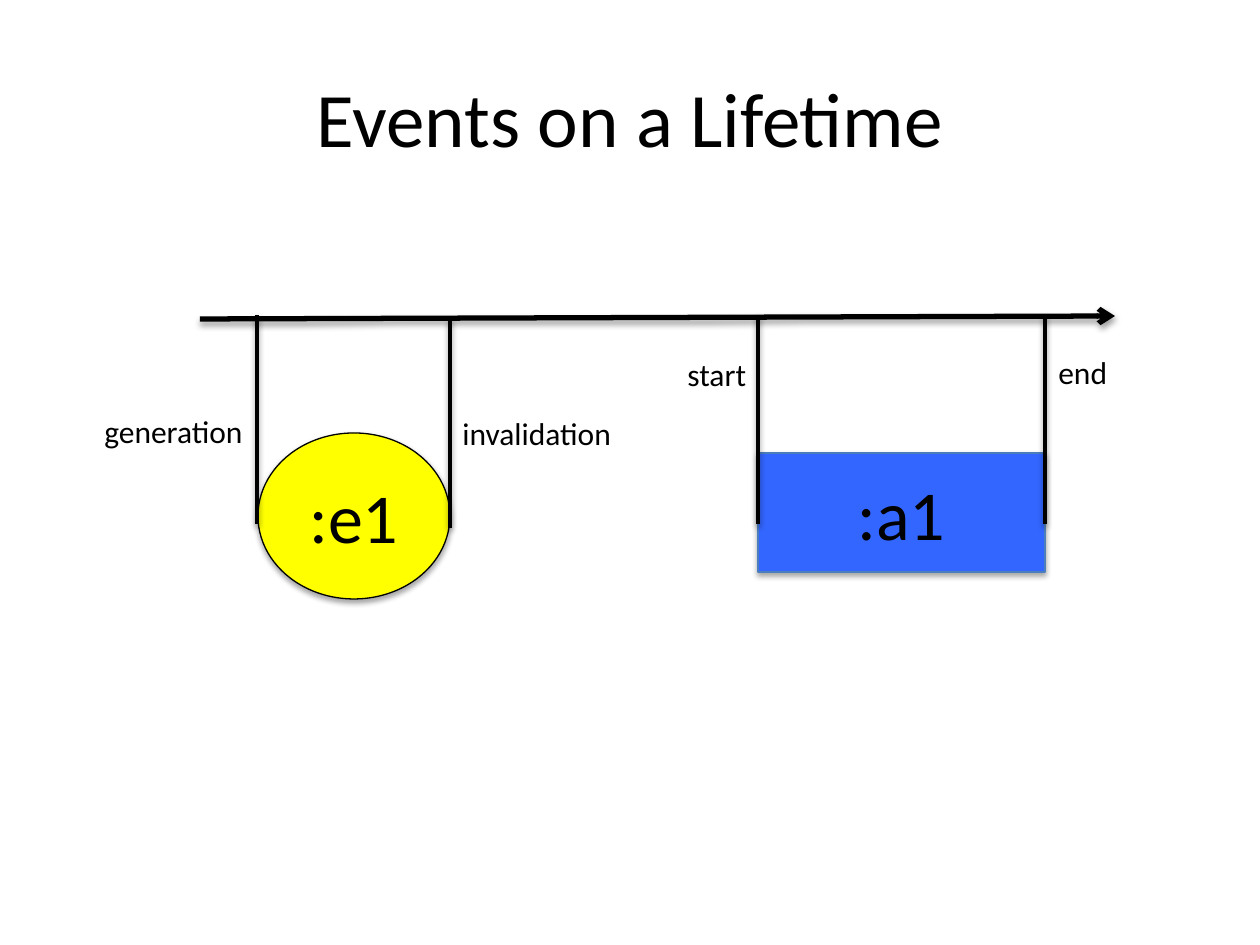
from dataclasses import dataclass

from lxml.etree import SubElement
from pptx import Presentation
from pptx.dml.color import RGBColor
from pptx.enum.shapes import MSO_CONNECTOR, MSO_SHAPE
from pptx.enum.text import MSO_ANCHOR, PP_ALIGN
from pptx.oxml.ns import qn
from pptx.util import Pt

EMU_PER_PX = 914400 / 126


@dataclass(frozen=True)
class Theme:
    font: str = "Calibri"
    ink: str = "000000"
    entity: str = "FFFF00"
    activity: str = "3366FF"
    activity_edge: str = "4B7EBC"
    title_size: int = 44
    name_size: int = 40
    label_size: int = 18
    axis_width: int = 3
    tick_width: int = 2
    edge_width: float = 0.75


THEME = Theme()
LINE_SHADOW = {"alpha": 38000, "distance": 20000}
SHAPE_SHADOW = {"alpha": 35000, "distance": 23000}

TITLE = ("Events on a Lifetime", (63, 38, 1134, 158))
TIME_AXIS = (200, 319, 1115, 316)
TICK_HEIGHT = 209
THINGS = [
    (":e1", MSO_SHAPE.OVAL, (258, 433, 192, 166), THEME.entity, THEME.ink),
    (":a1", MSO_SHAPE.RECTANGLE, (758, 453, 287, 119), THEME.activity, THEME.activity_edge),
]
EVENTS = [
    ("generation", (257, 315), (92, 406, 166, 50)),
    ("invalidation", (450, 319), (450, 408, 176, 50)),
    ("start", (758, 315), (675, 349, 86, 50)),
    ("end", (1045, 315), (1046, 347, 74, 50)),
]


def px(*lengths):
    return [round(length * EMU_PER_PX) for length in lengths]


def color(value):
    return RGBColor.from_string(value)


def add_shadow(shape, alpha, distance):
    effects = SubElement(shape._element.spPr, qn("a:effectLst"))
    shadow = SubElement(effects, qn("a:outerShdw"), blurRad="40000", dist=str(distance),
                        dir="5400000", rotWithShape="0")
    tint = SubElement(shadow, qn("a:srgbClr"), val=THEME.ink)
    SubElement(tint, qn("a:alpha"), val=str(alpha))


def write_text(shape, text, size, align=PP_ALIGN.CENTER, anchor=MSO_ANCHOR.MIDDLE, wrap=True):
    frame = shape.text_frame
    frame.word_wrap = wrap
    frame.vertical_anchor = anchor
    paragraph = frame.paragraphs[0]
    paragraph.alignment = align
    run = paragraph.add_run()
    run.text = text
    run.font.name = THEME.font
    run.font.size = Pt(size)
    run.font.color.rgb = color(THEME.ink)


def add_line(slide, ends, width, arrow=False):
    connector = slide.shapes.add_connector(MSO_CONNECTOR.STRAIGHT, *px(*ends))
    connector.line.color.rgb = color(THEME.ink)
    connector.line.width = Pt(width)
    if arrow:
        SubElement(connector.line._get_or_add_ln(), qn("a:tailEnd"), type="arrow")
    add_shadow(connector, **LINE_SHADOW)


def add_thing(slide, name, kind, box, fill, edge):
    shape = slide.shapes.add_shape(kind, *px(*box))
    shape.fill.solid()
    shape.fill.fore_color.rgb = color(fill)
    shape.line.color.rgb = color(edge)
    shape.line.width = Pt(THEME.edge_width)
    add_shadow(shape, **SHAPE_SHADOW)
    write_text(shape, name, THEME.name_size)


def main():
    presentation = Presentation()
    presentation.slide_width, presentation.slide_height = px(1260, 945)
    slide = presentation.slides.add_slide(presentation.slide_layouts[6])

    title, title_box = TITLE
    write_text(slide.shapes.add_textbox(*px(*title_box)), title, THEME.title_size)
    add_line(slide, TIME_AXIS, THEME.axis_width, arrow=True)
    for thing in THINGS:
        add_thing(slide, *thing)
    for label, (x, top), label_box in EVENTS:
        add_line(slide, (x, top, x, top + TICK_HEIGHT), THEME.tick_width)
        write_text(slide.shapes.add_textbox(*px(*label_box)), label, THEME.label_size,
                   align=PP_ALIGN.LEFT, anchor=MSO_ANCHOR.TOP, wrap=False)

    presentation.save("out.pptx")


if __name__ == "__main__":
    main()
